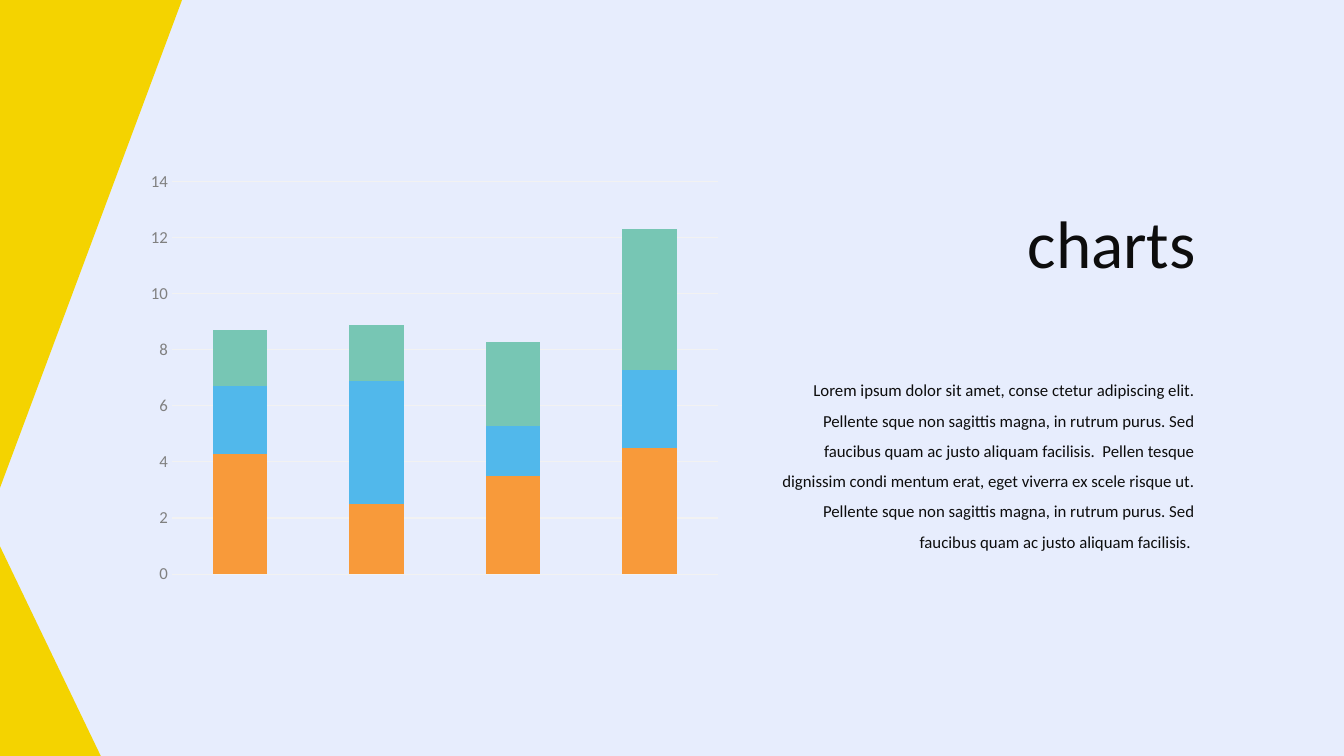
from dataclasses import dataclass

from lxml.etree import SubElement
from pptx import Presentation
from pptx.chart.data import CategoryChartData
from pptx.dml.color import RGBColor
from pptx.enum.chart import XL_CHART_TYPE, XL_TICK_MARK
from pptx.enum.shapes import MSO_SHAPE
from pptx.enum.text import MSO_ANCHOR, MSO_AUTO_SIZE, PP_ALIGN
from pptx.oxml.ns import qn
from pptx.shapes.autoshape import Shape
from pptx.slide import Slide
from pptx.util import Inches, Pt

WIDTH, HEIGHT = Inches(13.33), Inches(7.5)
COLUMNS, ROWS = 40, 30
FONT = "Calibri"
INK = "0D0D0D"
YELLOW = "F4D300"
BODY_TEXT = (
    "Lorem ipsum dolor sit amet, conse ctetur adipiscing elit. "
    "Pellente sque non sagittis magna, in rutrum purus. "
    "Sed faucibus quam ac justo aliquam facilisis.  "
    "Pellen tesque dignissim condi mentum erat, eget viverra ex scele risque ut. "
    "Pellente sque non sagittis magna, in rutrum purus. "
    "Sed faucibus quam ac justo aliquam facilisis. "
)


@dataclass(frozen=True)
class Area:
    """A rectangle measured in grid columns and rows."""

    column: float
    row: float
    columns: float
    rows: float

    def lengths(self) -> tuple[int, int, int, int]:
        """Return left, top, width and height on the slide."""
        return (
            round(self.column * WIDTH / COLUMNS),
            round(self.row * HEIGHT / ROWS),
            round(self.columns * WIDTH / COLUMNS),
            round(self.rows * HEIGHT / ROWS),
        )


@dataclass(frozen=True)
class Corner:
    """A right triangle in a corner of the slide."""

    area: Area
    upside_down: bool


@dataclass(frozen=True)
class Layer:
    """One series of the stacked columns."""

    name: str
    values: tuple[float, ...]
    color: str


CORNERS = (
    Corner(Area(0, 21.68, 3, 8.32), False),
    Corner(Area(0, -0.04, 5.43, 19.4), True),
)
LAYERS = (
    Layer("Series 1", (4.3, 2.5, 3.5, 4.5), "F89A3A"),
    Layer("Series 2", (2.4, 4.4, 1.8, 2.8), "51B8EB"),
    Layer("Series 3", (2, 2, 3, 5), "77C6B4"),
)
CHART_AREA = Area(4.14, 6.48, 17.58, 17.04)
TITLE_AREA = Area(26.02, 7.8, 9.87, 3.64)
BODY_AREA = Area(22.6, 14.48, 13.26, 7.56)


def paint(target: object, color: str) -> None:
    """Give a fill or a font a solid colour."""
    if hasattr(target, "solid"):
        target.solid()
        target.fore_color.rgb = RGBColor.from_string(color)
    else:
        target.color.rgb = RGBColor.from_string(color)


def draw_corner(page: Slide, corner: Corner) -> None:
    """Draw one yellow corner triangle."""
    shape = page.shapes.add_shape(MSO_SHAPE.RIGHT_TRIANGLE, *corner.area.lengths())
    shape.shadow.inherit = False
    paint(shape.fill, YELLOW)
    shape.line.fill.background()
    if corner.upside_down:
        shape.rotation = 180
        shape.element.spPr.find(qn("a:xfrm")).set("flipH", "1")


def draw_chart(page: Slide, area: Area) -> None:
    """Draw the stacked column chart."""
    data = CategoryChartData()
    data.categories = [str(number) for number in range(1, 5)]
    for layer in LAYERS:
        data.add_series(layer.name, layer.values)
    chart = page.shapes.add_chart(
        XL_CHART_TYPE.COLUMN_STACKED, *area.lengths(), data
    ).chart
    chart.has_legend = False
    chart.has_title = False
    chart.font.name = FONT
    chart.font.size = Pt(10)
    paint(chart.font, "000000")
    chart.category_axis.visible = False

    axis = chart.value_axis
    axis.minimum_scale, axis.maximum_scale, axis.major_unit = 0, 14, 2
    axis.major_tick_mark = XL_TICK_MARK.NONE
    axis.format.line.fill.background()
    axis.tick_labels.font.name = FONT
    axis.tick_labels.font.size = Pt(12)
    paint(axis.tick_labels.font, "808080")
    grid_line = axis.major_gridlines.format.line
    grid_line.width = Pt(0.75)
    paint(grid_line.fill, "F2F2F2")

    plot = chart.plots[0]
    plot.gap_width = 150
    plot.overlap = 100
    plot.vary_by_categories = False
    for series, layer in zip(plot.series, LAYERS):
        paint(series.format.fill, layer.color)


def write(
    box: Shape, text: str, *, area: Area, size: float, spacing: float = 1
) -> None:
    """Move a placeholder and fill it with right-aligned text."""
    box.left, box.top, box.width, box.height = area.lengths()
    frame = box.text_frame
    frame.word_wrap = True
    frame.auto_size = MSO_AUTO_SIZE.SHAPE_TO_FIT_TEXT
    frame.vertical_anchor = MSO_ANCHOR.TOP
    para = frame.paragraphs[0]
    para.alignment = PP_ALIGN.RIGHT
    para.line_spacing = spacing
    para.space_before = Pt(0)
    properties = para._p.get_or_add_pPr()
    properties.set("marL", "0")
    properties.set("indent", "0")
    SubElement(properties, qn("a:buNone"))
    span = para.add_run()
    span.text = text
    span.font.name = FONT
    span.font.size = Pt(size)
    paint(span.font, INK)


def main() -> None:
    """Build the slide and save it."""
    deck = Presentation()
    deck.slide_width, deck.slide_height = WIDTH, HEIGHT
    page = deck.slides.add_slide(deck.slide_layouts[1])
    paint(page.background.fill, "E7EDFD")
    for corner in CORNERS:
        draw_corner(page, corner)
    draw_chart(page, CHART_AREA)
    write(page.shapes.title, "charts", area=TITLE_AREA, size=48)
    write(page.placeholders[1], BODY_TEXT, area=BODY_AREA, size=12, spacing=1.5)
    deck.save("out.pptx")


if __name__ == "__main__":
    main()
